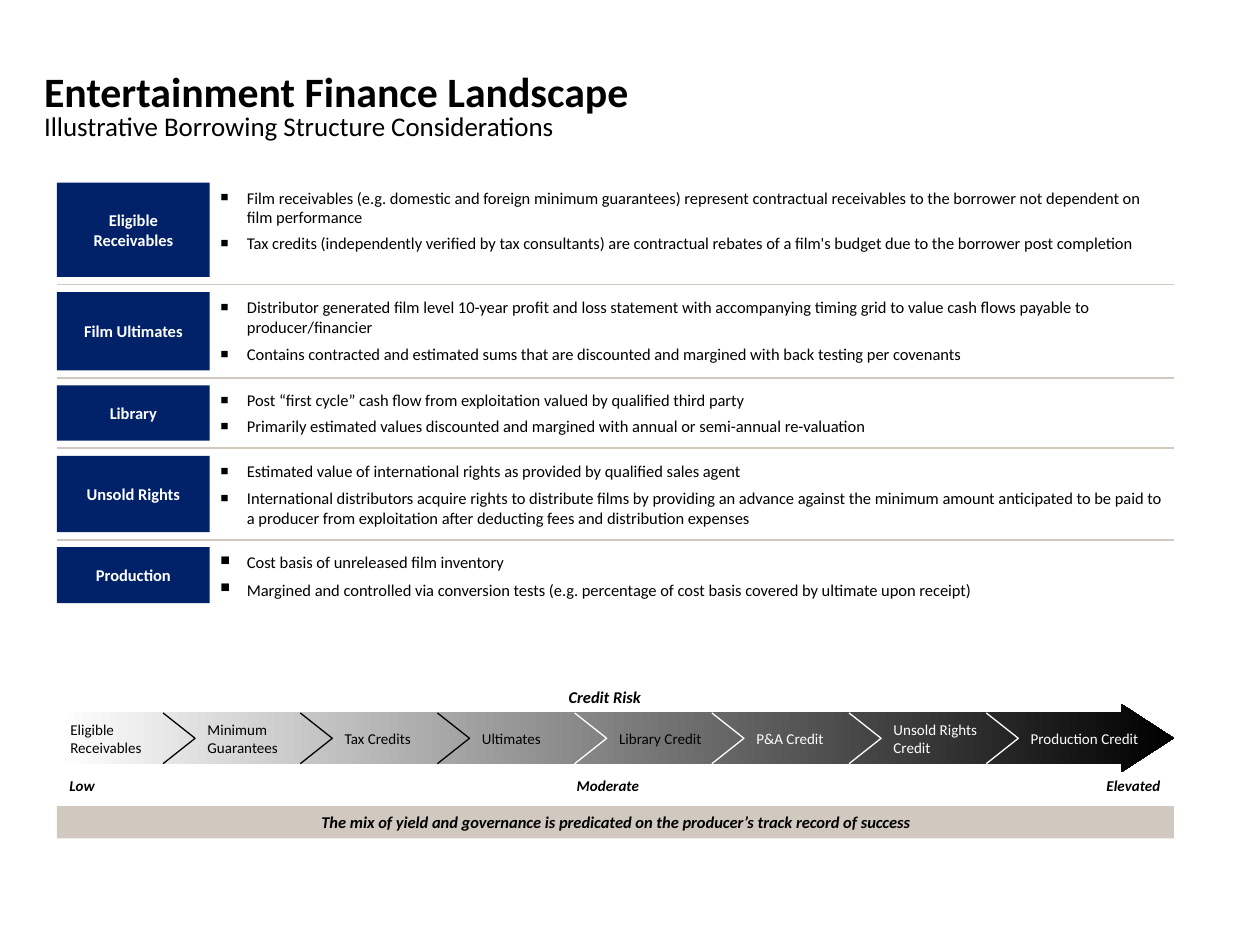
"""Build the entertainment finance landscape slide with its credit risk arrow."""
from lxml.etree import SubElement
from pptx import Presentation
from pptx.dml.color import RGBColor
from pptx.enum.shapes import MSO_CONNECTOR, MSO_SHAPE
from pptx.enum.text import MSO_ANCHOR, MSO_AUTO_SIZE, PP_ALIGN
from pptx.oxml.ns import qn
from pptx.util import Pt


def paint(color_format, hex_color):
    color_format.rgb = RGBColor.from_string(hex_color)


def write(shape, lines, size, color="000000", bold=False, italic=False,
          align=PP_ALIGN.LEFT, anchor=MSO_ANCHOR.TOP, inset=(7.2, 3.6)):
    frame = shape.text_frame
    frame.word_wrap = True
    frame.auto_size = MSO_AUTO_SIZE.NONE
    frame.vertical_anchor = anchor
    frame.margin_left = frame.margin_right = Pt(inset[0])
    frame.margin_top = frame.margin_bottom = Pt(inset[1])
    for index, line in enumerate(lines):
        paragraph = frame.add_paragraph() if index else frame.paragraphs[0]
        paragraph.alignment = align
        run = paragraph.add_run()
        run.text = line
        run.font.name = "Calibri"
        run.font.size = Pt(size)
        run.font.bold = bold
        run.font.italic = italic
        paint(run.font.color, color)
    return frame.paragraphs


NAVY, SAND, BLACK, WHITE = "012169", "D1C9C0", "000000", "FFFFFF"
LEFT, WIDTH = 32.6, 638.2

presentation = Presentation()
presentation.slide_width, presentation.slide_height = Pt(720), Pt(540)
slide = presentation.slides.add_slide(presentation.slide_layouts[4])
shapes = slide.shapes

title = shapes.title
title.left, title.top, title.width, title.height = Pt(25.2), Pt(48.2), Pt(556.6), Pt(19.4)
heading, = write(title, ["Entertainment Finance Landscape"], 23.9, bold=True, inset=(0, 0))
heading.line_spacing = Pt(18)

subtitle = shapes.add_textbox(Pt(25.2), Pt(62.6), Pt(556.6), Pt(19.4))
write(subtitle, ["Illustrative Borrowing Structure Considerations"], 15.4, inset=(0, 0))

categories = [
    ("Eligible Receivables", 54, 3.4, [
        "Film receivables (e.g. domestic and foreign minimum guarantees) represent contractual "
        "receivables to the borrower not dependent on film performance",
        "Tax credits (independently verified by tax consultants) are contractual rebates of a "
        "film's budget due to the borrower post completion"]),
    ("Film Ultimates", 44.7, 4.3, [
        "Distributor generated film level 10-year profit and loss statement with accompanying "
        "timing grid to value cash flows payable to producer/financier",
        "Contains contracted and estimated sums that are discounted and margined with back "
        "testing per covenants"]),
    ("Library", 31.7, 3.4, [
        "Post “first cycle” cash flow from exploitation valued by qualified third party",
        "Primarily estimated values discounted and margined with annual or semi-annual "
        "re-valuation"]),
    ("Unsold Rights", 43.6, 4.3, [
        "Estimated value of international rights as provided by qualified sales agent",
        "International distributors acquire rights to distribute films by providing an advance "
        "against the minimum amount anticipated to be paid to a producer from exploitation "
        "after deducting fees and distribution expenses"]),
    ("Production", 32, 4.3, [
        "Cost basis of unreleased film inventory",
        "Margined and controlled via conversion tests (e.g. percentage of cost basis covered "
        "by ultimate upon receipt)"]),
]
ROW_GAP = 8.6
considerations = [*slide.placeholders][1:] + [shapes.add_textbox(0, 0, 0, 0)]
top = 104.3
for (name, height, spacing, points), details in zip(categories, considerations):
    category = shapes.add_shape(MSO_SHAPE.RECTANGLE, Pt(LEFT), Pt(top), Pt(87.2), Pt(height))
    category.shadow.inherit = False
    category.fill.solid()
    paint(category.fill.fore_color, NAVY)
    category.line.fill.background()
    write(category, [name], 9.4, WHITE, bold=True, align=PP_ALIGN.CENTER,
          anchor=MSO_ANCHOR.MIDDLE)

    details.left, details.top, details.width, details.height = Pt(126), Pt(top), Pt(540), Pt(height)
    for point in write(details, points, 9.4, inset=(0, 2.9)):
        point.space_before = Pt(spacing)
        properties = point._p.get_or_add_pPr()
        properties.set("marL", str(Pt(15.1)))
        properties.set("indent", str(Pt(-15.1)))
        SubElement(properties, qn("a:buSzPct"), val="80000")
        SubElement(properties, qn("a:buChar"), char="■")

    if name != categories[-1][0]:
        rule_y = Pt(top + height + ROW_GAP / 2)
        divider = shapes.add_connector(MSO_CONNECTOR.STRAIGHT, Pt(LEFT), rule_y,
                                       Pt(LEFT + WIDTH), rule_y)
        paint(divider.line.color, SAND)
        divider.line.width = Pt(1)
        SubElement(divider._element.spPr, qn("a:effectLst"))
    top += height + ROW_GAP

risk_arrow = shapes.add_shape(MSO_SHAPE.RIGHT_ARROW, Pt(LEFT), Pt(402.3), Pt(WIDTH), Pt(39))
risk_arrow.shadow.inherit = False
risk_arrow.adjustments[0], risk_arrow.adjustments[1] = 0.75, 0.77
risk_arrow.fill.gradient()
risk_arrow.fill.gradient_angle = 0
for stop, position, shade in zip(risk_arrow.fill.gradient_stops, (0, 1), (WHITE, BLACK)):
    stop.position = position
    paint(stop.color, shade)
risk_arrow.line.fill.background()

STEP, STEP_TOP, STEP_HEIGHT, CHEVRON = 78.4, 407.4, 29, 18.3
credits = ["Eligible Receivables", "Minimum Guarantees", "Tax Credits", "Ultimates",
           "Library Credit", "P&A Credit", "Unsold Rights Credit", "Production Credit"]
for index, credit in enumerate(credits):
    step_left = 33.1 + index * STEP
    step = shapes.add_textbox(Pt(step_left), Pt(STEP_TOP), Pt(STEP), Pt(STEP_HEIGHT))
    write(step, [credit], 8.6, BLACK if index < 5 else WHITE, anchor=MSO_ANCHOR.MIDDLE)
    if index:
        outline = shapes.build_freeform(Pt(step_left - CHEVRON), Pt(STEP_TOP))
        outline.add_line_segments(
            [(Pt(step_left), Pt(STEP_TOP + STEP_HEIGHT / 2)),
             (Pt(step_left - CHEVRON), Pt(STEP_TOP + STEP_HEIGHT))], close=False)
        chevron = outline.convert_to_shape()
        chevron.shadow.inherit = False
        chevron.fill.background()
        paint(chevron.line.color, BLACK if index < 4 else WHITE)
        chevron.line.width = Pt(0.75)

for label, left, label_top, width, size, align in [
    ("Credit Risk", 307.4, 389.5, 76.3, 9.4, PP_ALIGN.CENTER),
    ("Low", 33.1, 440.6, 81.4, 8.6, PP_ALIGN.LEFT),
    ("Moderate", 288.7, 440.6, 117.4, 8.6, PP_ALIGN.CENTER),
    ("Elevated", 591.1, 440.6, 78.5, 8.6, PP_ALIGN.RIGHT),
]:
    risk_level = shapes.add_textbox(Pt(left), Pt(label_top), Pt(width), Pt(18))
    write(risk_level, [label], size, bold=True, italic=True, align=align, inset=(6.5, 3.2))

takeaway = shapes.add_shape(MSO_SHAPE.RECTANGLE, Pt(LEFT), Pt(460.6), Pt(WIDTH), Pt(18.6))
takeaway.shadow.inherit = False
takeaway.fill.solid()
paint(takeaway.fill.fore_color, SAND)
takeaway.line.fill.background()
write(takeaway, ["The mix of yield and governance is predicated on the producer’s track record of success"],
      9.4, bold=True, italic=True, align=PP_ALIGN.CENTER)

presentation.save("out.pptx")
